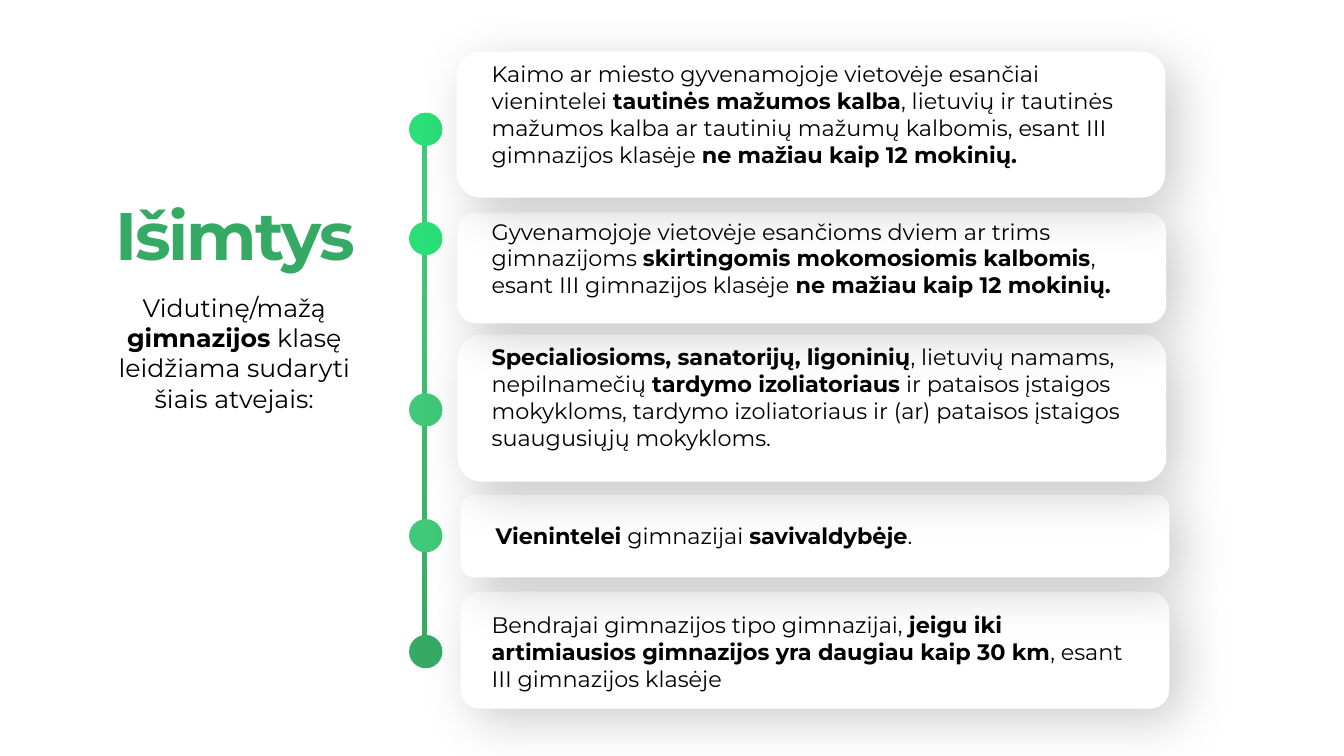
from lxml import etree
from pptx import Presentation
from pptx.dml.color import RGBColor
from pptx.enum import shapes, text
from pptx.oxml import ns
from pptx.util import Cm, Pt

FONT = "Montserrat"
BLACK, WHITE = "000000", "FFFFFF"
BRIGHT, MEDIUM, DARK = "2BDF78", "40C978", "36AA65"

DOT_LEFT, DOT_SIZE = 10.31, 0.84
CARD_WIDTH, TEXT_WIDTH = 17.86, 16.59

# card (left, top, height), text (left, top, height), dot (top, colour), wording
EXCEPTIONS = [
    ((11.51, 1.3, 3.68), (12.14, 1.4, 3.0), (2.84, BRIGHT),
     "Kaimo ar miesto gyvenamojoje vietovėje esančiai vienintelei "
     "**tautinės mažumos kalba**, lietuvių ir tautinės mažumos kalba ar "
     "tautinių mažumų kalbomis, esant III gimnazijos klasėje "
     "**ne mažiau kaip 12 mokinių.**"),
    ((11.53, 5.36, 2.79), (12.14, 5.36, 2.31), (5.59, BRIGHT),
     "Gyvenamojoje vietovėje esančioms dviem ar trims gimnazijoms "
     "**skirtingomis mokomosiomis kalbomis**, esant III gimnazijos klasėje "
     "**ne mažiau kaip 12 mokinių.**"),
    ((11.53, 8.43, 3.71), (12.14, 8.53, 3.0), (9.91, MEDIUM),
     "**Specialiosioms, sanatorijų, ligoninių**, lietuvių namams, "
     "nepilnamečių **tardymo izoliatoriaus** ir pataisos įstaigos mokykloms, "
     "tardymo izoliatoriaus ir (ar) pataisos įstaigos suaugusiųjų mokykloms."),
    ((11.61, 12.47, 2.08), (12.24, 13.03, 0.94), (13.08, MEDIUM),
     "**Vienintelei** gimnazijai **savivaldybėje**."),
    ((11.61, 14.91, 2.95), (12.14, 15.27, 2.31), (16.0, DARK),
     "Bendrajai gimnazijos tipo gimnazijai, **jeigu iki artimiausios "
     "gimnazijos yra daugiau kaip 30 km**, esant III gimnazijos klasėje"),
]


def rgb(colour):
    return RGBColor.from_string(colour)


class SlideBuilder:
    def __init__(self, slide):
        self.slide = slide

    def style(self, run, size, colour, bold):
        run.font.name = FONT
        run.font.size = Pt(size)
        run.font.bold = bold
        run.font.color.rgb = rgb(colour)

    def title(self, wording, left, top, width, height):
        heading = self.slide.shapes.title
        heading.left, heading.top = Cm(left), Cm(top)
        heading.width, heading.height = Cm(width), Cm(height)
        frame = heading.text_frame
        frame.text = wording
        frame.word_wrap = True
        frame.auto_size = text.MSO_AUTO_SIZE.NONE
        frame.vertical_anchor = text.MSO_ANCHOR.BOTTOM
        paragraph = frame.paragraphs[0]
        paragraph.alignment = text.PP_ALIGN.CENTER
        paragraph.line_spacing = 0.9
        run = paragraph.runs[0]
        self.style(run, 48, DARK, True)
        run._r.get_or_add_rPr().set("spc", "-150")

    def rich_text(self, wording, left, top, width, height, size=16,
                  align=text.PP_ALIGN.LEFT):
        """Add a text box; parts between ** marks are bold."""
        box = self.slide.shapes.add_textbox(
            Cm(left), Cm(top), Cm(width), Cm(height))
        frame = box.text_frame
        frame.word_wrap = True
        frame.auto_size = text.MSO_AUTO_SIZE.SHAPE_TO_FIT_TEXT
        paragraph = frame.paragraphs[0]
        paragraph.alignment = align
        for index, part in enumerate(wording.split("**")):
            if part:
                run = paragraph.add_run()
                run.text = part
                self.style(run, size, BLACK, index % 2 == 1)

    def shape(self, kind, left, top, width, height, colour):
        figure = self.slide.shapes.add_shape(
            kind, Cm(left), Cm(top), Cm(width), Cm(height))
        figure.shadow.inherit = False
        figure.line.fill.background()
        figure.fill.solid()
        figure.fill.fore_color.rgb = rgb(colour)
        return figure

    def timeline(self, left, top, width, height):
        bar = self.shape(shapes.MSO_SHAPE.RECTANGLE,
                         left, top, width, height, DARK)
        bar.fill.gradient()
        bar.fill.gradient_angle = 90
        stops = bar.fill.gradient_stops
        for stop, position, colour in zip(stops, (0, 0.81), (DARK, MEDIUM)):
            stop.position = position
            stop.color.rgb = rgb(colour)

    def dot(self, top, colour):
        self.shape(shapes.MSO_SHAPE.OVAL,
                   DOT_LEFT, top, DOT_SIZE, DOT_SIZE, colour)

    def card(self, left, top, height):
        panel = self.shape(shapes.MSO_SHAPE.ROUNDED_RECTANGLE,
                           left, top, CARD_WIDTH, height, WHITE)
        effects = panel._element.spPr.find(ns.qn("a:effectLst"))
        shadow = etree.SubElement(
            effects, ns.qn("a:outerShdw"), blurRad=str(Pt(37)),
            dist=str(Pt(12)), dir=str(43 * 60000), algn="tl",
            rotWithShape="0")
        tint = etree.SubElement(shadow, ns.qn("a:srgbClr"), val=BLACK)
        etree.SubElement(tint, ns.qn("a:alpha"), val="20000")


def main():
    deck = Presentation()
    deck.slide_width, deck.slide_height = Cm(33.87), Cm(19.05)
    builder = SlideBuilder(deck.slides.add_slide(deck.slide_layouts[5]))

    builder.timeline(10.64, 2.9, 0.13, 13.72)
    builder.title("Išimtys", 1.3, 4.39, 9.25, 2.67)
    builder.rich_text(
        "Vidutinę/mažą **gimnazijos** klasę leidžiama sudaryti šiais atvejais:",
        2.21, 7.24, 7.39, 3.33, size=18, align=text.PP_ALIGN.CENTER)

    # Each card casts its shadow on the one below it
    for card, _, dot, _ in reversed(EXCEPTIONS):
        builder.dot(*dot)
        builder.card(*card)
    for _, (left, top, height), _, wording in EXCEPTIONS:
        builder.rich_text(wording, left, top, TEXT_WIDTH, height)

    deck.save("out.pptx")


if __name__ == "__main__":
    main()
